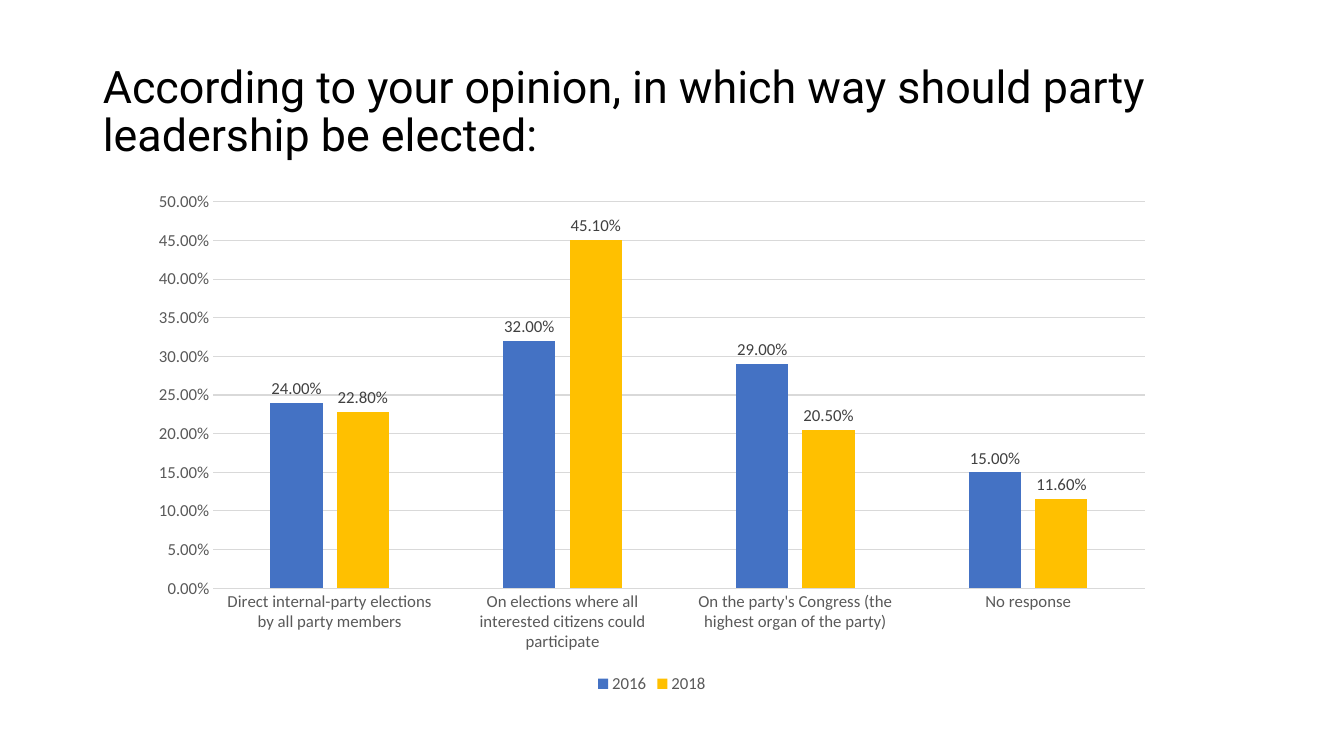
from pptx import Presentation
from pptx.chart.data import CategoryChartData
from pptx.dml.color import RGBColor
from pptx.enum.chart import XL_CHART_TYPE, XL_LABEL_POSITION, XL_LEGEND_POSITION, XL_TICK_MARK
from pptx.enum.text import MSO_ANCHOR, MSO_AUTO_SIZE, PP_ALIGN
from pptx.util import Inches, Pt

COLUMNS = XL_CHART_TYPE.COLUMN_CLUSTERED
OUTSIDE = XL_LABEL_POSITION.OUTSIDE_END
BOTTOM = XL_LEGEND_POSITION.BOTTOM
NO_TICK = XL_TICK_MARK.NONE
MIDDLE = MSO_ANCHOR.MIDDLE
NO_FIT = MSO_AUTO_SIZE.NONE
LEFT = PP_ALIGN.LEFT

WIDTH, HEIGHT = 13.33, 7.5
PERCENT = "0.00%"
GREY, DARK, PALE = "595959", "404040", "D9D9D9"
QUESTION = "According to your opinion, in which way should party leadership be elected:"
ANSWERS = [
    "Direct internal-party elections by all party members",
    "On elections where all interested citizens could participate",
    "On the party's Congress (the highest organ of the party)",
    "No response",
]
YEARS = {
    "2016": ("4472C4", [0.24, 0.32, 0.29, 0.15]),
    "2018": ("FFC000", [0.228, 0.451, 0.205, 0.116]),
}


def color(hex_code):
    return RGBColor.from_string(hex_code)


def area(left, top, width, height):
    return (Inches(WIDTH * left), Inches(HEIGHT * top),
            Inches(WIDTH * width), Inches(HEIGHT * height))


def style_font(font, size=12, hex_code=GREY, face="Calibri"):
    font.size = Pt(size)
    font.name = face
    font.bold = False
    font.color.rgb = color(hex_code)


def style_line(line, hex_code=PALE, width=0.75):
    line.color.rgb = color(hex_code)
    line.width = Pt(width)


def write_text(holder, text, spacing=0.9, align=LEFT, **font_format):
    frame = holder.text_frame
    frame.word_wrap = True
    frame.auto_size = NO_FIT
    frame.vertical_anchor = MIDDLE
    paragraph = frame.paragraphs[0]
    paragraph.alignment = align
    paragraph.line_spacing = spacing
    run = paragraph.add_run()
    run.text = text
    style_font(run.font, **font_format)


def add_question(slide, text):
    question = slide.shapes.title
    question.left, question.top, question.width, question.height = area(0.069, 0.053, 0.863, 0.193)
    write_text(question, text, size=32, hex_code="000000", face="Roboto")


def style_axis(axis):
    axis.major_tick_mark = NO_TICK
    axis.minor_tick_mark = NO_TICK
    style_font(axis.tick_labels.font)


def style_series(series, hex_code):
    series.format.fill.solid()
    series.format.fill.fore_color.rgb = color(hex_code)
    series.invert_if_negative = False
    labels = series.data_labels
    labels.show_value = True
    labels.position = OUTSIDE
    labels.number_format = PERCENT
    labels.number_format_is_linked = False
    style_font(labels.font, hex_code=DARK)


def add_answer_chart(slide):
    answers = CategoryChartData(number_format=PERCENT)
    answers.categories = ANSWERS
    for year, (_, shares) in YEARS.items():
        answers.add_series(year, shares)
    chart = slide.shapes.add_chart(COLUMNS, *area(0.103, 0.24, 0.764, 0.683), answers).chart
    style_font(chart.font, size=10, hex_code="000000")
    chart.has_title = False
    chart.has_legend = True
    chart.legend.position = BOTTOM
    chart.legend.include_in_layout = False
    style_font(chart.legend.font)

    style_axis(chart.category_axis)
    style_line(chart.category_axis.format.line)

    share_axis = chart.value_axis
    style_axis(share_axis)
    share_axis.minimum_scale, share_axis.maximum_scale = 0, 0.5
    share_axis.major_unit = 0.05
    share_axis.tick_labels.number_format = PERCENT
    share_axis.tick_labels.number_format_is_linked = False
    share_axis.format.line.fill.background()
    style_line(share_axis.major_gridlines.format.line)

    bars = chart.plots[0]
    bars.gap_width = 219
    bars.overlap = -27
    bars.vary_by_categories = False
    for series, (hex_code, _) in zip(bars.series, YEARS.values()):
        style_series(series, hex_code)


def main():
    deck = Presentation()
    deck.slide_width, deck.slide_height = Inches(WIDTH), Inches(HEIGHT)
    slide = deck.slides.add_slide(deck.slide_layouts[5])
    add_question(slide, QUESTION)
    add_answer_chart(slide)
    deck.save("out.pptx")


if __name__ == "__main__":
    main()
